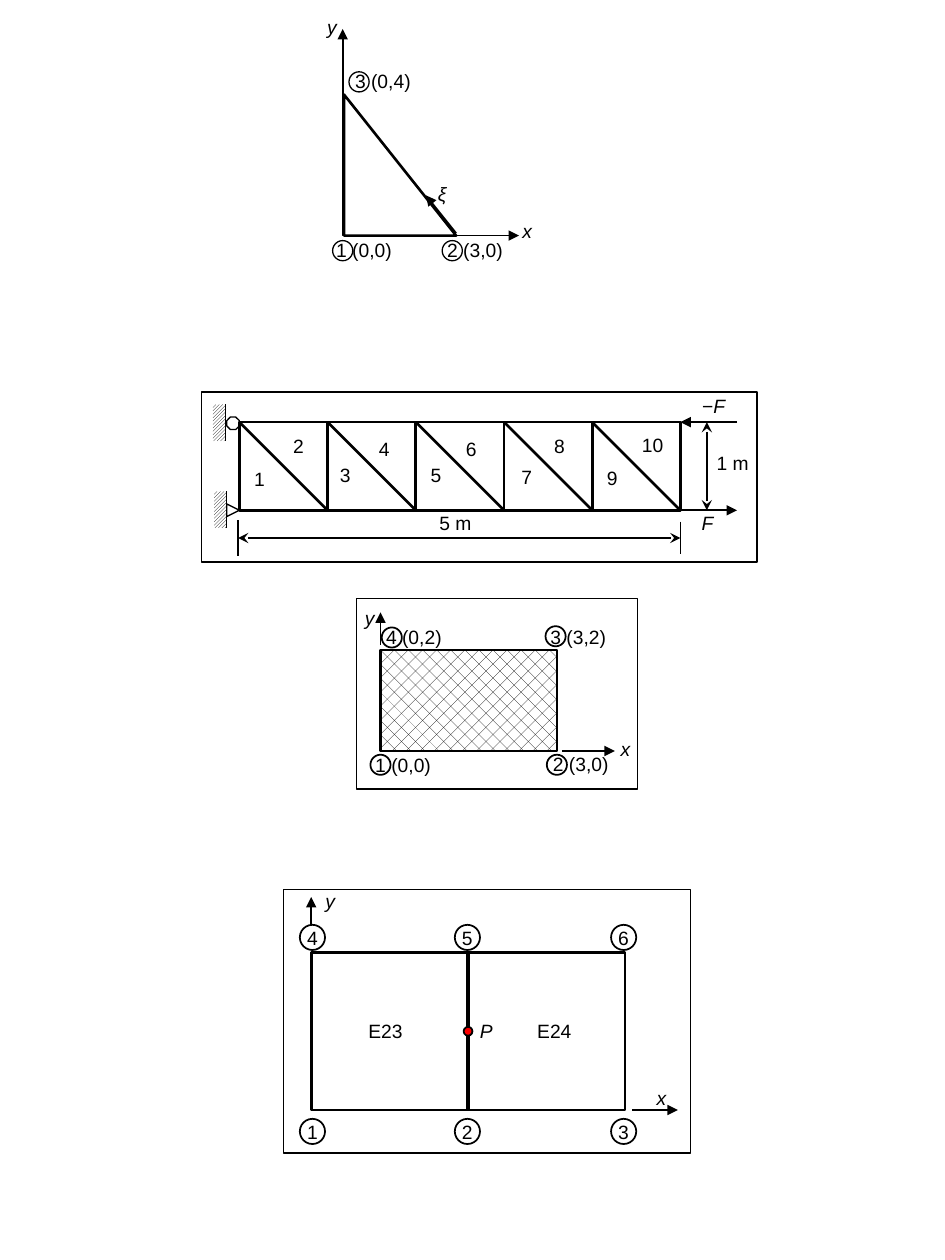
"""Build a slide of four finite element diagrams: triangle, truss, rectangle and element pair."""
from dataclasses import dataclass

from lxml.etree import SubElement
from pptx import Presentation
from pptx.dml.color import RGBColor
from pptx.enum.dml import MSO_PATTERN
from pptx.enum.shapes import MSO_CONNECTOR, MSO_SHAPE
from pptx.enum.text import MSO_ANCHOR, PP_ALIGN
from pptx.oxml.ns import qn
from pptx.util import Pt

PX = 9144


@dataclass(frozen=True)
class Theme:
    ink: RGBColor = RGBColor(0, 0, 0)
    paper: RGBColor = RGBColor(255, 255, 255)
    accent: RGBColor = RGBColor(255, 0, 0)
    font: str = "Arial"
    size: Pt = Pt(11)
    thin: Pt = Pt(0.75)
    medium: Pt = Pt(1)
    thick: Pt = Pt(1.5)


theme = Theme()
deck = Presentation()
deck.slide_width, deck.slide_height = 750 * PX, 1000 * PX
page = deck.slides.add_slide(deck.slide_layouts[6])


def stroke(item, weight, head=None, tail=None):
    item.line.color.rgb = theme.ink
    item.line.width = weight
    outline = item.element.spPr.find(qn("a:ln"))
    for tag, arrow in (("a:headEnd", head), ("a:tailEnd", tail)):
        if arrow:
            SubElement(outline, qn(tag), type=arrow)


def draw(kind, place, weight):
    shape = page.shapes.add_shape(kind, *(PX * length for length in place))
    shape.shadow.inherit = False
    shape.fill.background()
    stroke(shape, weight)
    return shape


panels = [(160, 311, 441, 135), (283, 475, 223, 151), (225, 706, 323, 209)]
for panel in panels:
    draw(MSO_SHAPE.RECTANGLE, panel, theme.medium)

bodies = [(190, 335, 350, 70), (247, 756, 125, 125), (371, 756, 125, 125)]
for body in bodies:
    draw(MSO_SHAPE.RECTANGLE, body, theme.thick)
draw(MSO_SHAPE.RIGHT_TRIANGLE, (273, 75, 89, 112), theme.thick)
draw(MSO_SHAPE.OCTAGON, (180, 331, 10, 10), theme.thin)
draw(MSO_SHAPE.ISOSCELES_TRIANGLE, (180, 400, 10, 10), theme.thin).rotation = 90

plate = draw(MSO_SHAPE.RECTANGLE, (302, 516, 140, 80), theme.thick)
walls = [draw(MSO_SHAPE.RECTANGLE, (left, top, 10, 29), theme.thin)
         for left, top in ((169, 321), (170, 390))]
for wall in walls:
    wall.line.fill.background()
hatches = [(plate, MSO_PATTERN.PERCENT_25)]
hatches += [(wall, MSO_PATTERN.DARK_UPWARD_DIAGONAL) for wall in walls]
for hatched, pattern in hatches:
    hatched.fill.patterned()
    hatched.fill.pattern = pattern
    hatched.fill.fore_color.rgb = theme.ink
    hatched.fill.back_color.rgb = theme.paper

builder = page.shapes.build_freeform(272, 23, scale=PX)
builder.add_line_segments([(272, 187), (412, 187)], close=False)
axes = builder.convert_to_shape()
axes.shadow.inherit = False
axes.fill.background()
stroke(axes, theme.medium, "triangle", "triangle")

lines = [
    (585, 335, 540, 335, theme.medium, None, "triangle"),
    (540, 405, 585, 405, theme.medium, None, "triangle"),
    (189, 413, 189, 441, theme.thin, None, None),
    (540, 414, 540, 440, theme.thin, None, None),
    (189, 427, 540, 427, theme.medium, "stealth", "stealth"),
    (561, 335, 561, 405, theme.medium, "stealth", "stealth"),
    (179, 321, 179, 350, theme.thin, None, None),
    (180, 390, 180, 419, theme.thin, None, None),
    (446, 596, 488, 596, theme.thin, None, "triangle"),
    (302, 512, 302, 486, theme.thin, None, "triangle"),
    (362, 185, 338, 155, theme.medium, None, "triangle"),
    (502, 881, 538, 881, theme.medium, None, "triangle"),
    (247, 751, 247, 712, theme.medium, None, "triangle"),
]
for left in range(190, 540, 70):
    lines.append((left, 335, left + 70, 405, theme.thick, None, None))
    if left > 190:
        lines.append((left, 335, left, 405, theme.thick, None, None))
for *ends, weight, head, tail in lines:
    line = page.shapes.add_connector(MSO_CONNECTOR.STRAIGHT, *(PX * end for end in ends))
    stroke(line, weight, head, tail)
    SubElement(line.element.spPr, qn("a:effectLst"))

rings = [
    (theme.thin, [(277, 57), (264, 191), (351, 191)]),
    (theme.medium, [(303, 498), (433, 497), (294, 599), (434, 599)]),
]
for weight, corners in rings:
    for left, top in corners:
        draw(MSO_SHAPE.OVAL, (left, top, 16, 16), weight)

point = draw(MSO_SHAPE.OVAL, (368, 815, 7, 7), theme.medium)
point.fill.solid()
point.fill.fore_color.rgb = theme.accent

written = []
for top, numbers in ((888, "123"), (734, "456")):
    for left, number in zip((238, 361, 485), numbers):
        node = draw(MSO_SHAPE.OVAL, (left, top, 20, 20), theme.medium)
        node.fill.solid()
        node.fill.fore_color.rgb = theme.paper
        node.text_frame.vertical_anchor = MSO_ANCHOR.MIDDLE
        written.append((node, number, "", False))

labels = [
    ("−", "F", 556, 313, 21), ("", "F", 551, 406, 21),
    ("1 m", "", 564, 358, 35), ("5 m", "", 333, 406, 57),
    ("", "x", 486, 585, 21), ("", "y", 283, 481, 21),
    ("1 (0,0)", "", 297, 598, 46), ("2 (3,0)", "", 438, 597, 46),
    ("3 (3,2)", "", 436, 496, 46), ("4 (0,2)", "", 304, 496, 49),
    ("1 (0,0)", "", 266, 189, 46), ("2 (3,0)", "", 354, 189, 46),
    ("3 (0,4)", "", 281, 55, 46),
    ("", "x", 408, 174, 21), ("", "y", 253, 12, 21), ("", "ξ", 341, 145, 20),
    ("", "P", 376, 809, 20), ("E23", "", 291, 809, 30), ("E24", "", 425, 809, 30),
    ("", "y", 252, 706, 20), ("", "x", 515, 862, 20),
]
members = [(195, 371), (226, 345), (263, 368), (294, 347), (335, 368),
           (363, 347), (407, 369), (433, 345), (475, 370), (507, 344)]
for number, (left, top) in enumerate(members, 1):
    labels.append((str(number), "", left, top, 22))
for upright, slanted, left, top, width in labels:
    box = page.shapes.add_textbox(left * PX, top * PX, width * PX, 20 * PX)
    written.append((box, upright, slanted, True))

for holder, upright, slanted, wraps in written:
    frame = holder.text_frame
    frame.word_wrap = wraps
    frame.margin_left = frame.margin_right = frame.margin_top = frame.margin_bottom = 0
    para = frame.paragraphs[0]
    para.alignment = PP_ALIGN.CENTER
    for words, italic in ((upright, False), (slanted, True)):
        if words:
            span = para.add_run()
            span.text = words
            span.font.name = theme.font
            span.font.size = theme.size
            span.font.italic = italic
            span.font.color.rgb = theme.ink

deck.save("out.pptx")
